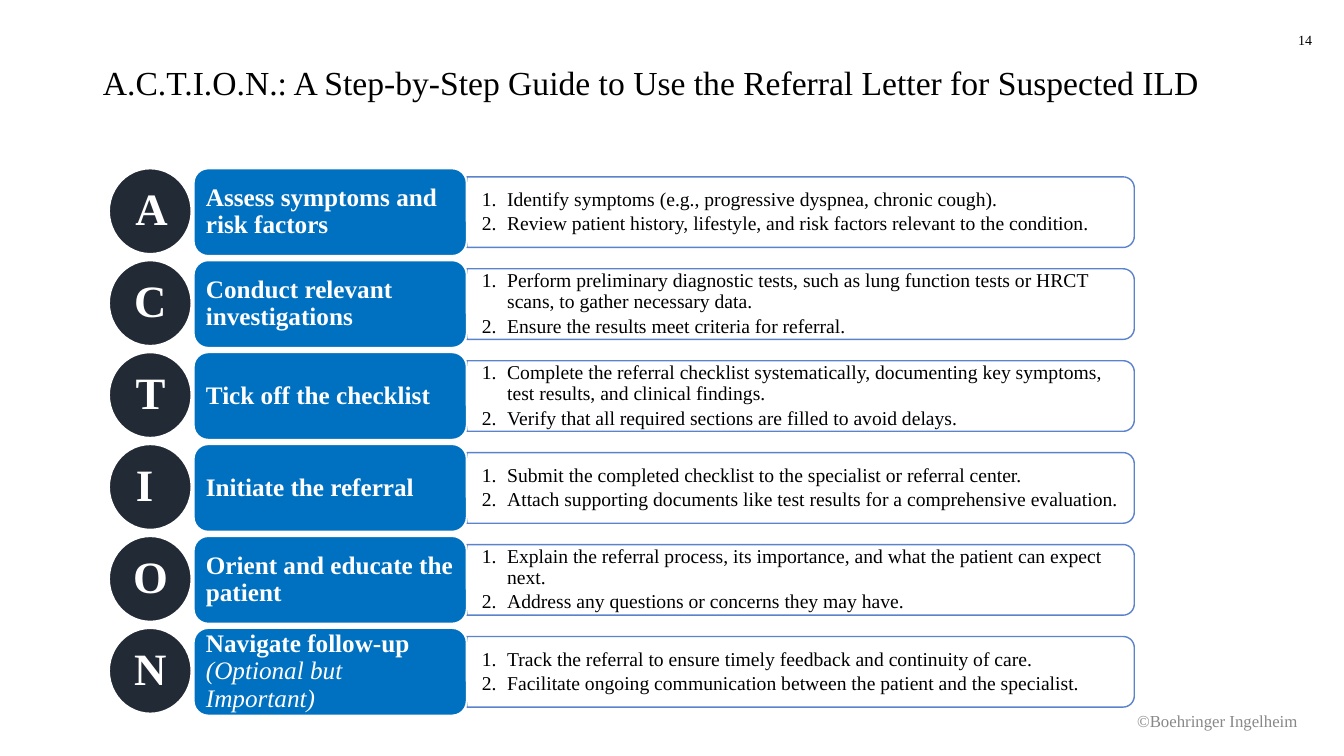
"""Build the A.C.T.I.O.N. referral letter slide."""
from math import cos, pi, sin

from lxml.etree import SubElement
from pptx import Presentation
from pptx.dml.color import RGBColor
from pptx.enum.shapes import MSO_SHAPE
from pptx.enum.text import MSO_ANCHOR, MSO_AUTO_SIZE, PP_ALIGN
from pptx.oxml.ns import qn
from pptx.util import Inches, Pt

TITLE = "A.C.T.I.O.N.: A Step-by-Step Guide to Use the Referral Letter for Suspected ILD"
PAGE = "14"
COPYRIGHT = "©Boehringer Ingelheim"
STEPS = [
    ("A ", "Assess symptoms and risk factors", "",
     ["Identify symptoms (e.g., progressive dyspnea, chronic cough).",
      "Review patient history, lifestyle, and risk factors relevant to the condition."]),
    ("C ", "Conduct relevant investigations", "",
     ["Perform preliminary diagnostic tests, such as lung function tests or HRCT scans, "
      "to gather necessary data.",
      "Ensure the results meet criteria for referral."]),
    ("T ", "Tick off the checklist", "",
     ["Complete the referral checklist systematically, documenting key symptoms, "
      "test results, and clinical findings.",
      "Verify that all required sections are filled to avoid delays."]),
    ("I ", "Initiate the referral", "",
     ["Submit the completed checklist to the specialist or referral center.",
      "Attach supporting documents like test results for a comprehensive evaluation."]),
    ("O", "Orient and educate the patient", "",
     ["Explain the referral process, its importance, and what the patient can expect next.",
      "Address any questions or concerns they may have."]),
    ("N ", "Navigate follow-up ", "(Optional but Important)",
     ["Track the referral to ensure timely feedback and continuity of care.",
      "Facilitate ongoing communication between the patient and the specialist."]),
]
COLORS = {"text": "000000", "white": "FFFFFF", "label": "0070C0",
          "badge": "222A35", "border": "4472C4", "muted": "888888"}
FONT = "Times New Roman"
TOP, LAST_TOP = 1.67, 6.23
PITCH = (LAST_TOP - TOP) / (len(STEPS) - 1)
BADGE_X, BADGE_W, BADGE_H = 1.08, 0.82, 0.85
LABEL_X, LABEL_W, LABEL_H = 1.92, 2.71, 0.87
BAR_X, BAR_W, BAR_H, BAR_R = LABEL_X + LABEL_W, 6.62, 0.7, 0.11
OPACITY = 87


def rgb(name):
    """Return a named colour."""
    return RGBColor.from_string(COLORS[name])


def add_run(p, text, size=18, color="text", bold=False, italic=False):
    """Add a formatted run to a paragraph."""
    r = p.add_run()
    r.text = text
    r.font.name, r.font.size = FONT, Pt(size)
    r.font.bold, r.font.italic = bold, italic
    r.font.color.rgb = rgb(color)


def set_frame(tf, insets=(0.1, 0.05, 0.1, 0.05), align=PP_ALIGN.LEFT, spacing=0.9):
    """Set up a text frame and return its first paragraph."""
    tf.word_wrap = True
    tf.auto_size = MSO_AUTO_SIZE.NONE
    tf.vertical_anchor = MSO_ANCHOR.MIDDLE
    tf.margin_left, tf.margin_top, tf.margin_right, tf.margin_bottom = map(Inches, insets)
    p = tf.paragraphs[0]
    p.alignment, p.line_spacing = align, spacing
    return p


def paint(sp, fill, line, width):
    """Give a shape its fill and outline."""
    sp.shadow.inherit = False
    sp.fill.solid()
    sp.fill.fore_color.rgb = rgb(fill)
    sp.line.color.rgb = rgb(line)
    sp.line.width = Pt(width)


def number(p):
    """Turn a paragraph into a numbered item."""
    pPr = p._p.get_or_add_pPr()
    pPr.set("marL", str(Inches(0.25)))
    pPr.set("indent", str(Inches(-0.25)))
    SubElement(pPr, qn("a:buFont"), typeface="+mj-lt")
    SubElement(pPr, qn("a:buAutoNum"), type="arabicPeriod")


def add_bar(slide, y, items):
    """Draw a bar with round right corners and its numbered items."""
    right, bottom = BAR_X + BAR_W, y + BAR_H
    points = []
    for cy, start in ((y + BAR_R, -pi / 2), (bottom - BAR_R, 0)):
        for k in range(9):
            a = start + k * pi / 16
            points.append((right - BAR_R + BAR_R * cos(a), cy + BAR_R * sin(a)))
    points.append((BAR_X, bottom))
    fb = slide.shapes.build_freeform(Inches(BAR_X), Inches(y))
    fb.add_line_segments([(Inches(px), Inches(py)) for px, py in points])
    sp = fb.convert_to_shape()
    paint(sp, "white", "border", 1)
    for clr in sp._element.spPr.iter(qn("a:srgbClr")):
        SubElement(clr, qn("a:alpha"), val=str(OPACITY * 1000))
    tf = sp.text_frame
    p = set_frame(tf, (0.15, 0.06, 0.08, 0.06))
    for i, item in enumerate(items):
        if i:
            p = tf.add_paragraph()
            p.alignment, p.line_spacing, p.space_before = PP_ALIGN.LEFT, 0.9, Pt(2.1)
        number(p)
        add_run(p, item, size=14)


def add_box(slide, shape, box, fill, insets, align):
    """Draw a filled preset shape and return its first paragraph."""
    sp = slide.shapes.add_shape(shape, *map(Inches, box))
    paint(sp, fill, "white", 1.5)
    return set_frame(sp.text_frame, insets, align)


def add_note(slide, text, box, size, color, align):
    """Add a small text box."""
    tf = slide.shapes.add_textbox(*map(Inches, box)).text_frame
    add_run(set_frame(tf, align=align, spacing=1.0), text, size, color)


def main():
    """Assemble and save the slide."""
    prs = Presentation()
    prs.slide_width, prs.slide_height = Inches(13.33), Inches(7.5)
    slide = prs.slides.add_slide(prs.slide_layouts[5])

    title = slide.shapes.title
    title.left, title.top, title.width, title.height = map(Inches, (0.92, 0.4, 11.5, 0.87))
    add_run(set_frame(title.text_frame), TITLE, size=24)
    add_note(slide, PAGE, (12.69, 0.15, 0.51, 0.5), 10, "text", PP_ALIGN.CENTER)
    add_note(slide, COPYRIGHT, (8.47, 6.95, 4.5, 0.4), 12, "muted", PP_ALIGN.RIGHT)

    for i, (letter, label, remark, items) in enumerate(STEPS):
        y = TOP + i * PITCH
        add_bar(slide, y + (LABEL_H - BAR_H) / 2, items)
        p = add_box(slide, MSO_SHAPE.ROUNDED_RECTANGLE, (LABEL_X, y, LABEL_W, LABEL_H),
                    "label", (0.08, 0.04, 0.08, 0.04), PP_ALIGN.LEFT)
        add_run(p, label, color="white", bold=True)
        if remark:
            add_run(p, remark, color="white", italic=True)
        p = add_box(slide, MSO_SHAPE.OVAL, (BADGE_X, y, BADGE_W, BADGE_H),
                    "badge", (0.12, 0.08, 0.12, 0.08), PP_ALIGN.CENTER)
        add_run(p, letter, size=32, color="white", bold=True)

    prs.save("out.pptx")


if __name__ == "__main__":
    main()
